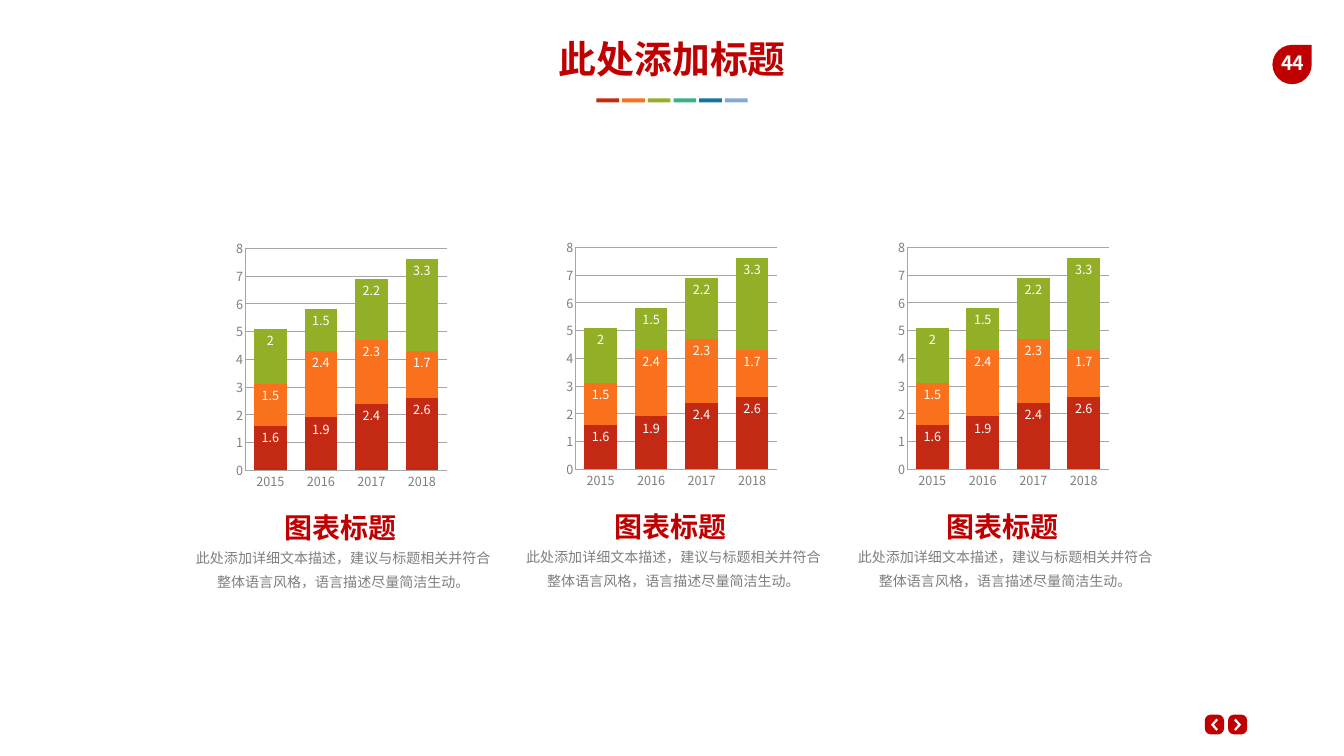
from lxml import etree
from pptx import Presentation
from pptx.chart.data import CategoryChartData
from pptx.dml.color import RGBColor
from pptx.enum.chart import XL_CHART_TYPE, XL_LABEL_POSITION, XL_TICK_MARK
from pptx.enum.shapes import MSO_SHAPE
from pptx.enum.text import MSO_ANCHOR, MSO_AUTO_SIZE, PP_ALIGN
from pptx.oxml.ns import qn
from pptx.util import Inches, Pt

RED = RGBColor(0xC0, 0x00, 0x00)
WHITE = RGBColor(0xFF, 0xFF, 0xFF)
GRAY = RGBColor(0x7E, 0x7E, 0x7E)
GRID = RGBColor(0xA6, 0xA6, 0xA6)
BRICK = RGBColor(0xC4, 0x2A, 0x13)
ORANGE = RGBColor(0xF9, 0x71, 0x1C)
GREEN = RGBColor(0x92, 0xAF, 0x27)
TEAL = RGBColor(0x38, 0xB2, 0x8A)
BLUE = RGBColor(0x16, 0x74, 0x9F)
SKY = RGBColor(0x82, 0xAA, 0xD2)
STACKED = XL_CHART_TYPE.COLUMN_STACKED
INSIDE_END = XL_LABEL_POSITION.INSIDE_END
NO_TICK = XL_TICK_MARK.NONE
RECTANGLE = MSO_SHAPE.RECTANGLE
ROUNDED = MSO_SHAPE.ROUNDED_RECTANGLE
TEARDROP = MSO_SHAPE.TEAR
CENTER = PP_ALIGN.CENTER
MIDDLE = MSO_ANCHOR.MIDDLE
FIT_SHAPE = MSO_AUTO_SIZE.SHAPE_TO_FIT_TEXT

FONT = "Noto Sans CJK SC"
YEARS = ["2015", "2016", "2017", "2018"]
SERIES = [
    ("Series 1", [1.6, 1.9, 2.4, 2.6], BRICK),
    ("Series 2", [1.5, 2.4, 2.3, 1.7], ORANGE),
    ("Series 3", [2, 1.5, 2.2, 3.3], GREEN),
]
PLOT_LAYOUT = {"x": 0.06, "y": 0.056, "w": 0.917, "h": 0.848}
PANEL_POSITIONS = [(3.63, 4.63), (10.18, 4.61), (16.76, 4.61)]
DESCRIPTION = "此处添加详细文本描述，建议与标题相关并符合整体语言风格，语言描述尽量简洁生动。"


def paint(shape, color):
    """Give a shape a plain fill without line or shadow."""
    shape.shadow.inherit = False
    shape.fill.solid()
    shape.fill.fore_color.rgb = color
    shape.line.fill.background()


def add_block(slide, preset, box, color):
    """Add a plain preset shape in the box."""
    shape = slide.shapes.add_shape(preset, *map(Inches, box))
    paint(shape, color)
    return shape


def add_text(slide, box, text, size, color, bold=False, wrap=True,
             insets=(0.2, 0.1), spacing=None):
    """Add one centred paragraph in the box."""
    frame = slide.shapes.add_textbox(*map(Inches, box)).text_frame
    frame.word_wrap = wrap
    frame.auto_size = FIT_SHAPE
    frame.vertical_anchor = MIDDLE
    frame.margin_left = frame.margin_right = Inches(insets[0])
    frame.margin_top = frame.margin_bottom = Inches(insets[1])
    paragraph = frame.paragraphs[0]
    paragraph.alignment = CENTER
    if spacing:
        paragraph.line_spacing = spacing
    run = paragraph.add_run()
    run.text = text
    run.font.size = Pt(size)
    run.font.bold = bold
    run.font.color.rgb = color
    set_font(run.font, run._r.get_or_add_rPr())


def set_font(font, properties):
    """Use the same typeface for Latin and East Asian text."""
    font.name = FONT
    east_asian = etree.Element(qn("a:ea"), typeface=FONT)
    properties.find(qn("a:latin")).addnext(east_asian)


def add_header(slide, left, top):
    """Place the slide title and its row of colour bars."""
    add_text(slide, (left, top, 9.81, 1.01), "此处添加标题", 54, RED,
             bold=True, insets=(0.1, 0.05))
    for index, color in enumerate([BRICK, ORANGE, GREEN, TEAL, BLUE, SKY]):
        bar = (left + 3.4 + index * 0.51, top + 1.3, 0.45, 0.08)
        add_block(slide, RECTANGLE, bar, color)


def add_page_badge(slide, left, top):
    """Place the page number on its teardrop."""
    add_block(slide, TEARDROP, (left, top, 0.78, 0.78), RED)
    add_text(slide, (left - 0.08, top + 0.01, 0.97, 0.67), "44", 28, WHITE,
             bold=True, wrap=False)


def add_navigation_button(slide, left, top, direction):
    """Place a button whose chevron points left (-1) or right (1)."""
    button = add_block(slide, ROUNDED, (left, top, 0.38, 0.39), RED)
    button.adjustments[0] = 0.3
    center_x, center_y = left + 0.19, top + 0.2
    outline = [(-0.04, -0.12), (0.07, 0), (-0.04, 0.12),
               (-0.07, 0.09), (0.01, 0), (-0.07, -0.09)]
    points = [(Inches(center_x + direction * x), Inches(center_y + y))
              for x, y in outline]
    builder = slide.shapes.build_freeform(*points[0])
    builder.add_line_segments(points[1:], close=True)
    paint(builder.convert_to_shape(), WHITE)


def set_plot_layout(chart):
    """Fix the inner plot area as shares of the chart."""
    plot_area = chart._chartSpace.chart.plotArea
    for old_layout in plot_area.findall(qn("c:layout")):
        plot_area.remove(old_layout)
    layout = etree.Element(qn("c:layout"))
    manual = etree.SubElement(layout, qn("c:manualLayout"))
    settings = {"layoutTarget": "inner", "xMode": "edge", "yMode": "edge"}
    for name, value in {**settings, **PLOT_LAYOUT}.items():
        etree.SubElement(manual, qn(f"c:{name}"), val=str(value))
    plot_area.insert(0, layout)


def add_stacked_chart(slide, box):
    """Add the stacked column chart in the box."""
    data = CategoryChartData()
    data.categories = YEARS
    for name, values, _ in SERIES:
        data.add_series(name, values)
    chart = slide.shapes.add_chart(STACKED, *map(Inches, box), data).chart
    chart.has_title = False
    chart.has_legend = False
    chart.font.size = Pt(18)
    chart.font.color.rgb = GRAY
    set_font(chart.font, chart.font._rPr)
    for axis in (chart.category_axis, chart.value_axis):
        axis.major_tick_mark = axis.minor_tick_mark = NO_TICK
        axis.format.line.color.rgb = GRID
    value_axis = chart.value_axis
    value_axis.minimum_scale = 0
    value_axis.maximum_scale = 8
    value_axis.major_unit = 1
    value_axis.has_major_gridlines = True
    value_axis.major_gridlines.format.line.color.rgb = GRID
    plot = chart.plots[0]
    plot.gap_width = 55
    plot.overlap = 100
    plot.vary_by_categories = False
    for series, (_, _, color) in zip(plot.series, SERIES):
        series.format.fill.solid()
        series.format.fill.fore_color.rgb = color
        labels = series.data_labels
        labels.show_value = True
        labels.position = INSIDE_END
        labels.font.size = Pt(18)
        labels.font.color.rgb = WHITE
        set_font(labels.font, labels.font._rPr)
    set_plot_layout(chart)


def add_chart_panel(slide, left, top):
    """Place a chart with its heading and description."""
    add_stacked_chart(slide, (left + 0.97, top, 4.37, 5.2))
    add_text(slide, (left + 1.8, top + 5.4, 2.65, 0.88), "图表标题", 40, RED,
             bold=True, wrap=False)
    add_text(slide, (left, top + 6.04, 6.36, 1.14), DESCRIPTION, 20, GRAY,
             spacing=1.4)


def main():
    """Build and save the presentation."""
    presentation = Presentation()
    presentation.slide_width = Inches(26.66)
    presentation.slide_height = Inches(15)
    slide = presentation.slides.add_slide(presentation.slide_layouts[6])
    add_navigation_button(slide, 23.9, 14.18, -1)
    add_navigation_button(slide, 24.36, 14.18, 1)
    add_page_badge(slide, 25.24, 0.89)
    add_header(slide, 8.43, 0.65)
    for left, top in PANEL_POSITIONS:
        add_chart_panel(slide, left, top)
    presentation.save("out.pptx")


if __name__ == "__main__":
    main()
